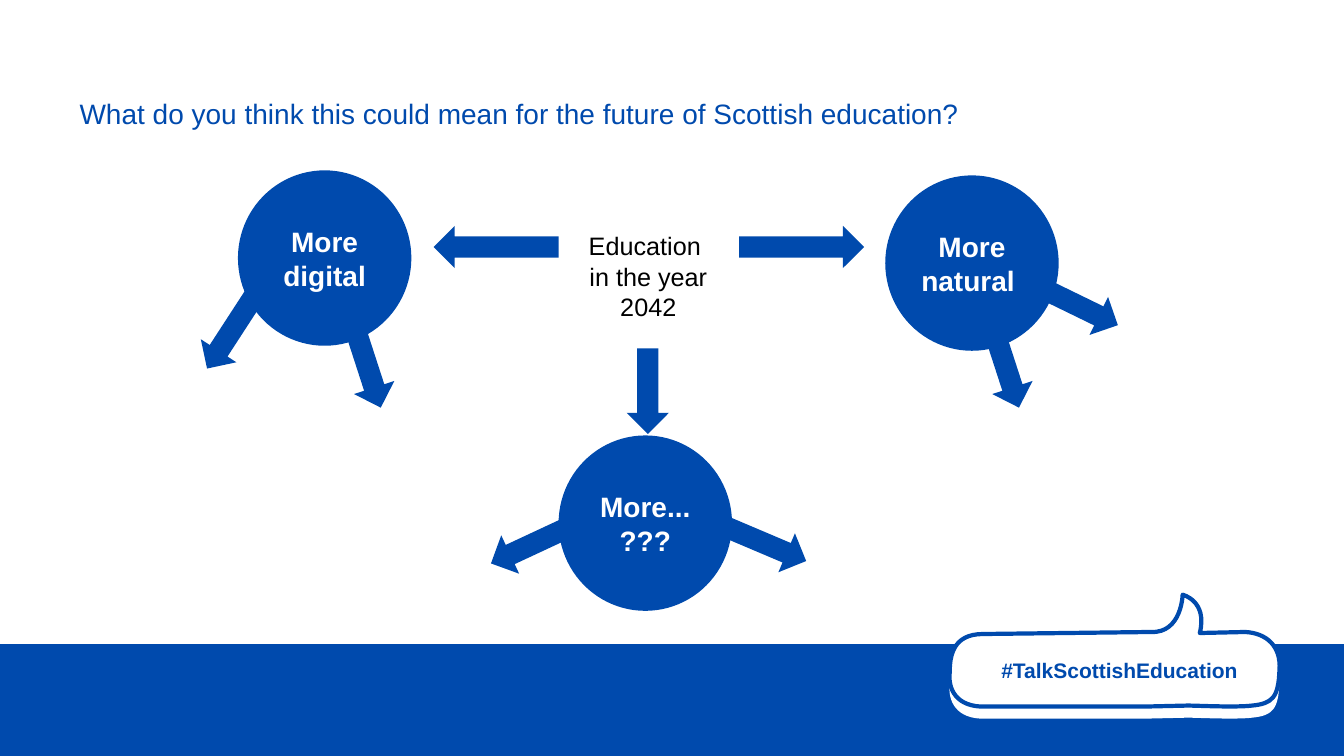
"""Build the slide on the future of Scottish education."""
from dataclasses import dataclass

from lxml.etree import SubElement
from pptx import Presentation
from pptx.dml.color import RGBColor as Rgb
from pptx.enum.shapes import MSO_SHAPE as Preset
from pptx.enum.text import MSO_ANCHOR as Anchor, PP_ALIGN as Align
from pptx.oxml.ns import qn
from pptx.util import Inches, Pt

COLOURS = {"blue": "004AAD", "white": "FFFFFF", "black": "000000"}


@dataclass
class Circle:
    left: float
    top: float
    text: str


@dataclass
class Arrow:
    left: float
    top: float
    angle: int = 0
    length: float = 0.85


CIRCLES = [
    Circle(2.36, 1.69, "More digital"),
    Circle(8.78, 1.74, "More natural "),
    Circle(5.54, 4.32, "More...???"),
]
ARROWS = [
    Arrow(4.3, 2.24, 180, 1.24),
    Arrow(7.33, 2.24, 0, 1.24),
    Arrow(6, 3.67, 90),
    Arrow(3.22, 3.43, 72),
    Arrow(1.86, 3.09, 123),
    Arrow(10.28, 2.83, 26),
    Arrow(9.55, 3.43, 72),
    Arrow(4.83, 5.2, 155),
    Arrow(7.18, 5.19, 23),
]
BUBBLE_START = (9.42, 6.67)
BUBBLE_SEGMENTS = [
    [(9.42, 6.51), (9.45, 6.29), (9.75, 6.29)],
    [(11.42, 6.27)],
    [(11.72, 6.28), (11.73, 5.9), (11.73, 5.9)],
    [(11.73, 5.9), (11.98, 5.96), (11.9, 6.28)],
    [(12.35, 6.27)],
    [(12.56, 6.28), (12.71, 6.41), (12.69, 6.65)],
    [(12.68, 6.92), (12.62, 6.98), (12.42, 7)],
    [(12.26, 7.02), (11.87, 7), (11.78, 7)],
    [(11.34, 7.01)],
    [(9.78, 7.01)],
    [(9.48, 7.02), (9.4, 6.83), BUBBLE_START],
]


def rgb(name: str) -> Rgb:
    return Rgb.from_string(COLOURS[name])


def paint(shape, fill: str) -> None:
    shape.shadow.inherit = False
    shape.fill.solid()
    shape.fill.fore_color.rgb = rgb(fill)
    shape.line.fill.background()


def add_preset(page, preset: Preset, left: float, top: float,
               width: float, height: float, fill: str = "blue"):
    shape = page.shapes.add_shape(
        preset, Inches(left), Inches(top), Inches(width), Inches(height))
    paint(shape, fill)
    return shape


def add_box(page, left: float, top: float, width: float, height: float):
    return page.shapes.add_textbox(
        Inches(left), Inches(top), Inches(width), Inches(height))


def write(shape, lines: list[str], size: int, colour: str, bold: bool = False,
          anchor: Anchor = Anchor.MIDDLE, **layout) -> None:
    frame = shape.text_frame
    frame.word_wrap = True
    frame.vertical_anchor = anchor
    for index, line in enumerate(lines):
        para = frame.add_paragraph() if index else frame.paragraphs[0]
        for name, value in ({"alignment": Align.CENTER} | layout).items():
            setattr(para, name, value)
        span = para.add_run()
        span.text = line
        font = {"name": "Arial", "size": Pt(size), "bold": bold}
        for name, value in font.items():
            setattr(span.font, name, value)
        span.font.color.rgb = rgb(colour)


def bend(bubble, drop: float) -> None:
    nodes = list(bubble._element.iter(qn("a:lnTo")))
    for node, segment in zip(nodes, BUBBLE_SEGMENTS):
        if len(segment) == 1:
            continue
        node.tag = qn("a:cubicBezTo")
        node.remove(node[0])
        for x, y in segment:
            SubElement(node, qn("a:pt"), x=str(Inches(x) - bubble.left),
                       y=str(Inches(y + drop) - bubble.top))


def add_bubble(page, drop: float = 0):
    corners = [BUBBLE_START, *(segment[-1] for segment in BUBBLE_SEGMENTS)]
    start, *rest = [(Inches(x), Inches(y + drop)) for x, y in corners]
    builder = page.shapes.build_freeform(*start)
    builder.add_line_segments(rest, close=True)
    bubble = builder.convert_to_shape()
    bend(bubble, drop)
    paint(bubble, "white")
    return bubble


def add_footer(page) -> None:
    add_preset(page, Preset.RECTANGLE, 0, 6.39, 13.33, 1.11)
    add_bubble(page, drop=0.12)
    bubble = add_bubble(page)
    bubble.line.color.rgb = rgb("blue")
    bubble.line.width = Pt(3)
    write(add_box(page, 9.44, 6.47, 3.27, 0.35), [" #TalkScottishEducation"],
          15, "blue", bold=True)


def main() -> None:
    deck = Presentation()
    deck.slide_width, deck.slide_height = Inches(13.33), Inches(7.5)
    page = deck.slides.add_slide(deck.slide_layouts[6])
    add_footer(page)
    centre = add_preset(page, Preset.RECTANGLE, 5.58, 2.24, 1.7, 1.01, "white")
    write(centre, ["Education ", "in the year 2042"], 18, "black", anchor=Anchor.TOP)
    for circle in CIRCLES:
        disc = add_preset(page, Preset.OVAL, circle.left, circle.top, 1.72, 1.74)
        write(disc, [circle.text], 20, "white", bold=True)
    for arrow in ARROWS:
        shape = add_preset(page, Preset.RIGHT_ARROW, arrow.left, arrow.top,
                           arrow.length, 0.42)
        shape.rotation = arrow.angle
    write(add_box(page, 0.69, 0.83, 11.75, 0.62),
          ["What do you think this could mean for the future of Scottish education?"],
          20, "blue", alignment=Align.LEFT, line_spacing=0.9, space_before=Pt(10))
    deck.save("out.pptx")


if __name__ == "__main__":
    main()
